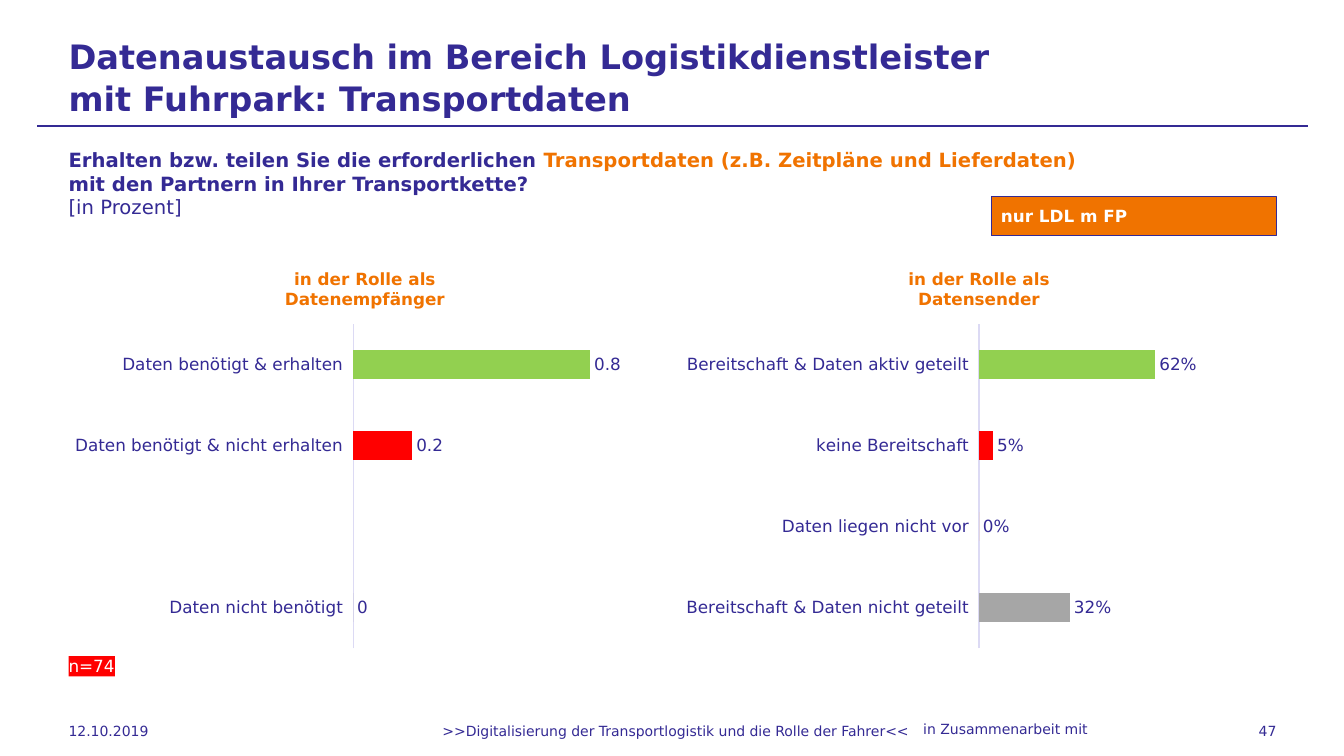
from lxml import etree
from pptx import Presentation
from pptx.chart.data import CategoryChartData as ChartData
from pptx.dml.color import RGBColor as Rgb
from pptx.enum.chart import XL_CHART_TYPE as Kind, XL_LABEL_POSITION as Spot
from pptx.enum.chart import XL_TICK_LABEL_POSITION as Labels, XL_TICK_MARK as Tick
from pptx.enum.shapes import MSO_CONNECTOR as Link, MSO_SHAPE as Shape
from pptx.enum.text import MSO_ANCHOR as Anchor, MSO_AUTO_SIZE as Fit, PP_ALIGN as Align
from pptx.oxml import parse_xml
from pptx.oxml.ns import nsdecls, qn
from pptx.util import Inches, Pt

FONT = "DejaVu Sans"
COLORS = {
    "navy": "342A94", "orange": "F07300", "white": "FFFFFF", "axis": "DCDAF4",
    "red": "FF0000", "green": "92D050", "grey": "A6A6A6", "peach": "FFAB5D",
}
LEFT = 0.68


def tint(name):
    return Rgb.from_string(COLORS[name])


def style(font, size, color, bold=False):
    font.name, font.size, font.bold = FONT, Pt(size), bold
    font.color.rgb = tint(color)


def paint(fill, color):
    fill.solid()
    fill.fore_color.rgb = tint(color)


def write(frame, runs, size, align=Align.LEFT, anchor=Anchor.MIDDLE, inset=(0, 0), wrap=True):
    """Fill a frame with (text, color, bold) runs; None breaks the line."""
    frame.auto_size, frame.word_wrap = Fit.NONE, wrap
    frame.vertical_anchor = anchor
    frame.margin_left = frame.margin_right = Inches(inset[0])
    frame.margin_top = frame.margin_bottom = Inches(inset[1])
    line = frame.paragraphs[0]
    line.alignment = align
    for item in runs:
        if item is None:
            line.add_line_break()
            continue
        run = line.add_run()
        run.text, color, bold = item
        style(run.font, size, color, bold)


def add_text(slide, box, runs, size, **opts):
    shape = slide.shapes.add_textbox(*map(Inches, box))
    write(shape.text_frame, runs, size, **opts)


def add_tag(slide, box, text, fill, edge=None, **opts):
    tag = slide.shapes.add_shape(Shape.RECTANGLE, *map(Inches, box))
    tag.shadow.inherit = False
    paint(tag.fill, fill)
    if edge:
        tag.line.color.rgb = tint(edge)
        tag.line.width = Pt(0.75)
    else:
        tag.line.fill.background()
    write(tag.text_frame, [(text, "white", edge is not None)], 12, **opts)


def add_head(slide, box):
    left, top, width, height = box
    title = slide.shapes.title
    title.left, title.top = Inches(left), Inches(top)
    title.width, title.height = Inches(width), Inches(height)
    text = "Datenaustausch im Bereich Logistikdienstleister mit Fuhrpark: Transportdaten"
    write(title.text_frame, [(text, "navy", True)], 24)
    title.text_frame.paragraphs[0].line_spacing = 1.05
    y = Inches(top + 0.65)
    rule = slide.shapes.add_connector(Link.STRAIGHT, Inches(0.37), y, Inches(12.97), y)
    rule.line.color.rgb = tint("navy")
    rule.line.width = Pt(0.75)
    etree.SubElement(rule._element.spPr, qn("a:effectLst"))


def add_question(slide, box):
    runs = [
        ("Erhalten bzw. teilen Sie die erforderlichen ", "navy", True),
        ("Transportdaten (z.B. Zeitpläne und Lieferdaten) ", "orange", True),
        ("mit den Partnern in Ihrer Transportkette?", "navy", True),
        None,
        ("[in Prozent]", "navy", False),
    ]
    add_text(slide, box, runs, 14, anchor=Anchor.TOP)


def place_plot(chart, x, y, w, h):
    """Fix the inner plot area, as fractions of the chart."""
    area = chart._chartSpace.chart.plotArea
    for old in area.findall(qn("c:layout")):
        area.remove(old)
    parts = "".join(f'<c:{tag} val="{val}"/>' for tag, val in (
        ("layoutTarget", "inner"), ("xMode", "edge"), ("yMode", "edge"),
        ("x", x), ("y", y), ("w", w), ("h", h)))
    area.insert(0, parse_xml(
        f'<c:layout {nsdecls("c")}><c:manualLayout>{parts}</c:manualLayout></c:layout>'))


def add_bars(slide, box, role, rows, plot_x, plot_w, form):
    """Draw one role's bar chart from (label, value, color) rows, bottom up."""
    data = ChartData(number_format=form)
    data.categories = [row[0] for row in rows]
    data.add_series("Series 1", [row[1] for row in rows])
    chart = slide.shapes.add_chart(Kind.BAR_CLUSTERED, *map(Inches, box), data).chart
    style(chart.font, 12, "navy")
    chart.has_legend = False
    chart.has_title = True
    head = chart.chart_title.text_frame
    for part, text in enumerate(("in der Rolle als", role)):
        line = head.add_paragraph() if part else head.paragraphs[0]
        run = line.add_run()
        run.text = text
        style(run.font, 12, "orange", True)

    cats, vals = chart.category_axis, chart.value_axis
    cats.major_tick_mark = cats.minor_tick_mark = Tick.NONE
    cats.tick_label_position = Labels.LOW
    cats.format.line.color.rgb = tint("axis")
    cats.format.line.width = Pt(0.75)
    vals.minimum_scale, vals.maximum_scale = 0, 1
    vals.has_major_gridlines = False
    vals.visible = False

    plot = chart.plots[0]
    plot.gap_width, plot.vary_by_categories = 182, False
    plot.has_data_labels = True
    labels = plot.data_labels
    labels.show_value, labels.position = True, Spot.OUTSIDE_END
    labels.number_format, labels.number_format_is_linked = form, False
    style(labels.font, 12, "navy")
    bars = plot.series[0]
    paint(bars.format.fill, "white")
    for spot, (_, _, color) in enumerate(rows):
        if color:
            paint(bars.points[spot].format.fill, color)
    place_plot(chart, plot_x, 0.18, plot_w, 0.8)


def add_charts(slide, box):
    left, top, width, height = box
    size = (5.88, height)
    get = [
        ("Daten nicht benötigt", 0, "grey"),
        ("", None, None),
        ("Daten benötigt & nicht erhalten", 0.2, "red"),
        ("Daten benötigt & erhalten", 0.8, "green"),
    ]
    send = [
        ("Bereitschaft & Daten nicht geteilt", 0.32, "grey"),
        ("Daten liegen nicht vor", 0, "peach"),
        ("keine Bereitschaft", 0.05, "red"),
        ("Bereitschaft & Daten aktiv geteilt", 0.62, "green"),
    ]
    add_bars(slide, (left, top, *size), "Datenempfänger", get, 0.48, 0.5, "General")
    right = left + width - size[0]
    add_bars(slide, (right, top, *size), "Datensender", send, 0.5, 0.48, "0%")


def add_foot(slide, top):
    claim = ">>Digitalisierung der Transportlogistik und die Rolle der Fahrer<<"
    for left, width, text, align in (
        (LEFT, 1.57, "12.10.2019", Align.LEFT),
        (2.41, 8.58, claim, Align.CENTER),
        (11.16, 1.5, "47", Align.RIGHT),
    ):
        add_text(slide, (left, top, width, 0.4), [(text, "navy", False)], 10, align=align)
    add_text(slide, (8.4, top + 0.05, 2.53, 0.27), [("in Zusammenarbeit mit ", "navy", False)],
             10, align=Align.RIGHT, anchor=Anchor.TOP, inset=(0.1, 0.05))


def main():
    deck = Presentation()
    deck.slide_width, deck.slide_height = Inches(13.33), Inches(7.5)
    slide = deck.slides.add_slide(deck.slide_layouts[5])
    add_head(slide, (LEFT, 0.6, 9.45, 0.31))
    add_charts(slide, (LEFT, 2.49, 11.97, 4.02))
    add_question(slide, (LEFT, 1.47, 10.39, 0.71))
    add_tag(slide, (9.83, 1.95, 2.83, 0.39), "nur LDL m FP", "orange", "navy", inset=(0.1, 0.05))
    add_tag(slide, (LEFT, 6.51, 0.46, 0.2), "n=74", "red", anchor=Anchor.TOP, wrap=False)
    add_foot(slide, 7.05)
    deck.save("out.pptx")


if __name__ == "__main__":
    main()
